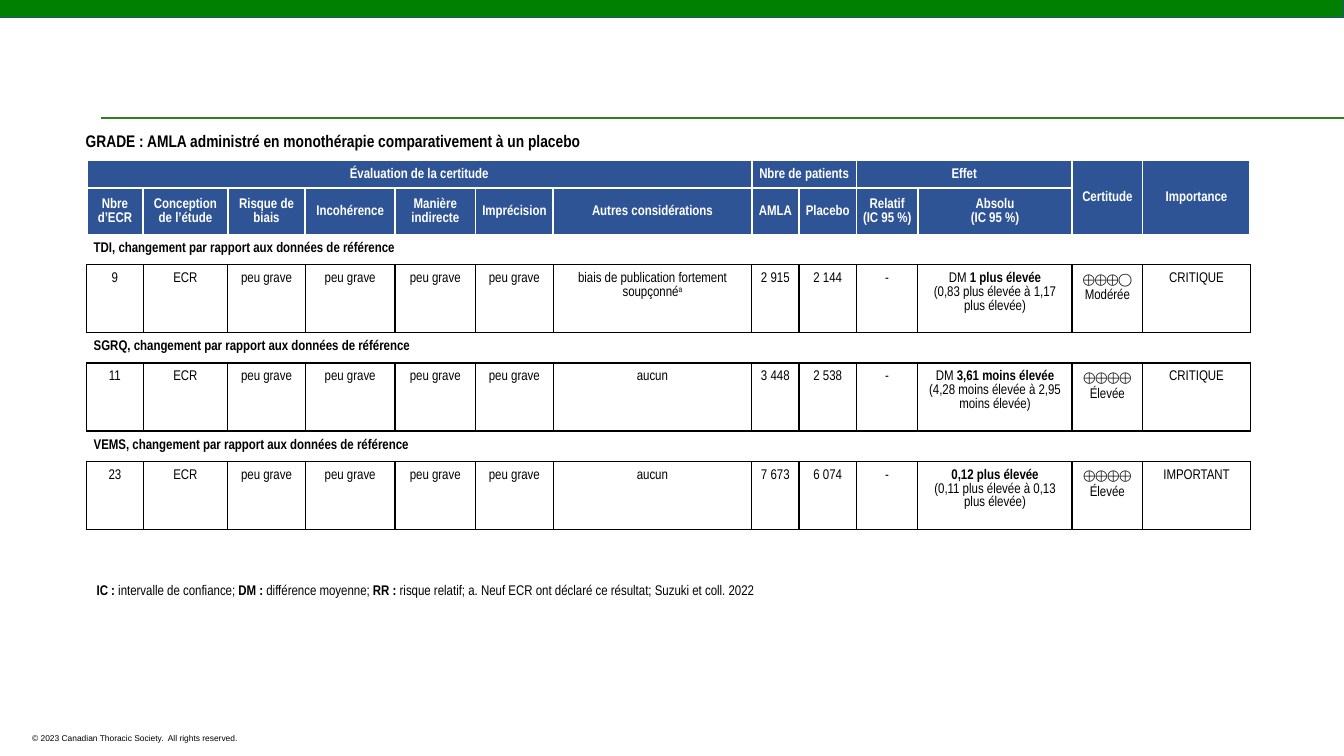
from copy import deepcopy
from dataclasses import dataclass

from lxml import etree
from pptx import Presentation
from pptx import util as u
from pptx.dml.color import RGBColor
from pptx.enum import shapes, text
from pptx.oxml.ns import qn


@dataclass(frozen=True)
class Theme:
    body: str = "Arial Narrow"
    legal: str = "Arial"
    symbol: str = "Cambria"
    ink: str = "000000"
    paper: str = "FFFFFF"
    header: str = "2F5496"
    bar: str = "008000"
    bar_edge: str = "265178"
    rule: str = "2F7E20"
    title_size: int = 12
    body_size: int = 10
    legal_size: int = 6
    grid_line: float = 1
    header_line: float = 1.5


T = Theme()
W, H = u.Inches(13.33), u.Inches(7.5)
SIDES = ("L", "R", "T", "B")

COLUMNS = (0.56, 0.84, 0.77, 0.89, 0.8, 0.77, 1.97, 0.47, 0.57, 0.61, 1.53, 0.7, 1.07)
HEADER_ROWS = (3.6, 5.6)
LABEL_ROW, DATA_ROW = 4, 8.27
GROUPS = (
    ("Évaluation de la certitude", 0, 1, 7),
    ("Nbre de patients", 7, 1, 2),
    ("Effet", 9, 1, 2),
    ("Certitude", 11, 2, 1),
    ("Importance", 12, 2, 1),
)
HEADINGS = (
    "Nbre d’ECR", "Conception de l’étude", "Risque de biais", "Incohérence",
    "Manière indirecte", "Imprécision", "Autres considérations", "AMLA", "Placebo",
    "Relatif\n(IC 95 %)", "Absolu\n(IC 95 %)",
)
OUTCOMES = (
    ("TDI", "9", [("biais de publication fortement soupçonné", ""), ("a", "sup")],
     "2 915", "2 144",
     [("DM ", ""), ("1 plus élevée\n", "bold"), ("(0,83 plus élevée à 1,17 plus élevée)", "")],
     "⨁⨁⨁◯", "Modérée", "CRITIQUE"),
    ("SGRQ", "11", [("aucun", "")], "3 448", "2 538",
     [("DM ", ""), ("3,61 moins élevée\n", "bold"), ("(4,28 moins élevée à 2,95 moins élevée)", "")],
     "⨁⨁⨁⨁", "Élevée", "CRITIQUE"),
    ("VEMS", "23", [("aucun", "")], "7 673", "6 074",
     [("0,12 plus élevée\n", "bold"), ("(0,11 plus élevée à 0,13 plus élevée)", "")],
     "⨁⨁⨁⨁", "Élevée", "IMPORTANT"),
)
NOTE = [
    ("IC :", "bold"), (" intervalle de confiance; ", ""),
    ("DM :", "bold"), (" différence moyenne; ", ""),
    ("RR :", "bold"),
    (" risque relatif; a. Neuf ECR ont déclaré ce résultat; Suzuki et coll. 2022", ""),
]


def rgb(color):
    return RGBColor.from_string(color)


def share(x, y, w, h):
    return [round(v * side / 100) for v, side in ((x, W), (y, H), (w, W), (h, H))]


def write(p, runs, size=T.body_size, color=T.ink, font=T.body):
    for words, style in runs:
        for i, line in enumerate(words.split("\n")):
            if i:
                p.add_line_break()
                br = p._p.findall(qn("a:br"))[-1]
                br.append(deepcopy(r._r.rPr))
            if not line:
                continue
            r = p.add_run()
            r.text = line
            r.font.size = u.Pt(size)
            r.font.name = T.symbol if style == "symbol" else font
            r.font.bold = style == "bold"
            r.font.color.rgb = rgb(color)
            if style == "sup":
                r.font._element.set("baseline", "30000")


def frame(sp, runs, anchor=text.MSO_ANCHOR.TOP, **style):
    tf = sp.text_frame
    tf.word_wrap = True
    tf.auto_size = text.MSO_AUTO_SIZE.SHAPE_TO_FIT_TEXT
    tf.vertical_anchor = anchor
    p = tf.paragraphs[0]
    p.alignment = text.PP_ALIGN.LEFT
    write(p, runs, **style)


def add_text(s, box, runs, **style):
    frame(s.shapes.add_textbox(*share(*box)), runs, **style)


def add_title(s, box, words):
    sp = s.shapes.title
    sp.left, sp.top, sp.width, sp.height = share(*box)
    frame(sp, [(words, "bold")], size=T.title_size)


def add_bar(s, box):
    sp = s.shapes.add_shape(shapes.MSO_SHAPE.RECTANGLE, *share(*box))
    sp.shadow.inherit = False
    sp.fill.solid()
    sp.fill.fore_color.rgb = rgb(T.bar)
    sp.line.color.rgb = rgb(T.bar_edge)
    sp.line.width = u.Pt(0.75)


def add_rule(s, x1, x2, y):
    line = s.shapes.add_connector(
        shapes.MSO_CONNECTOR.STRAIGHT, *share(x1, y, x2, y))
    line.line.color.rgb = rgb(T.rule)
    line.line.width = u.Pt(1)
    etree.SubElement(line._element.spPr, qn("a:effectLst"))


def add_borders(cell, edges):
    tcPr = cell._tc.get_or_add_tcPr()
    for side in SIDES:
        ln = etree.SubElement(tcPr, qn(f"a:ln{side}"))
        if side in edges:
            color, width = edges[side]
            ln.set("w", str(u.Pt(width)))
            fill = etree.SubElement(ln, qn("a:solidFill"))
            etree.SubElement(fill, qn("a:srgbClr")).set("val", color)
        else:
            ln.set("w", "0")
            etree.SubElement(ln, qn("a:noFill"))


def paint(cell, edges, fill=None):
    add_borders(cell, edges)
    if fill:
        cell.fill.solid()
        cell.fill.fore_color.rgb = rgb(fill)
    else:
        cell.fill.background()


def fill_cell(cell, runs, margins, align=text.PP_ALIGN.CENTER,
              anchor=text.MSO_ANCHOR.MIDDLE, color=T.ink):
    (cell.margin_left, cell.margin_top,
     cell.margin_right, cell.margin_bottom) = [u.Inches(m) for m in margins]
    cell.vertical_anchor = anchor
    p = cell.text_frame.paragraphs[0]
    p.alignment = align
    p.line_spacing = 1.07
    p.space_after = u.Pt(8)
    write(p, runs, color=color)


def add_header(tbl):
    edges = dict.fromkeys(SIDES, (T.paper, T.header_line))
    for row in range(len(HEADER_ROWS)):
        for cell in tbl.rows[row].cells:
            paint(cell, edges, T.header)
    titles = [(0, *group) for group in GROUPS]
    titles += [(1, words, col, 1, 1) for col, words in enumerate(HEADINGS)]
    for row, words, col, down, across in titles:
        cell = tbl.cell(row, col)
        if down * across > 1:
            cell.merge(tbl.cell(row + down - 1, col + across - 1))
        fill_cell(cell, [(words, "bold")], (0.05,) * 4, color=T.paper)


def add_outcome(tbl, row, outcome):
    name, trials, other, treated, placebo, effect, marks, level, weight = outcome
    black = (T.ink, T.grid_line)
    first = row == len(HEADER_ROWS)
    edges = {"T": (T.paper, T.header_line) if first else black, "B": black}
    for cell in tbl.rows[row].cells:
        paint(cell, edges, T.paper)
    label = tbl.cell(row, 0)
    label.merge(tbl.cell(row, len(COLUMNS) - 1))
    fill_cell(label, [(f"{name}, changement par rapport aux données de référence", "bold")],
              (0.07, 0.05, 0.07, 0.07), align=text.PP_ALIGN.LEFT)

    values = [[(v, "")] for v in (trials, "ECR", *["peu grave"] * 4)]
    values += [other, [(treated, "")], [(placebo, "")], [("-", "")], effect,
               [(f"{marks}\n", "symbol"), (level, "")], [(weight, "")]]
    for cell, runs in zip(tbl.rows[row + 1].cells, values):
        paint(cell, dict.fromkeys(SIDES, black))
        fill_cell(cell, runs, (0.07,) * 4, anchor=text.MSO_ANCHOR.TOP)


def add_grade_table(s, x, y, w):
    heights = [*HEADER_ROWS, *[LABEL_ROW, DATA_ROW] * len(OUTCOMES)]
    box = share(x, y, w, sum(heights))
    tbl = s.shapes.add_table(len(heights), len(COLUMNS), *box).table
    tbl.first_row = tbl.horz_banding = False
    for col, part in zip(tbl.columns, COLUMNS):
        col.width = round(box[2] * part / sum(COLUMNS))
    for row, height in zip(tbl.rows, heights):
        row.height = round(H * height / 100)
    add_header(tbl)
    for i, outcome in enumerate(OUTCOMES):
        add_outcome(tbl, len(HEADER_ROWS) + 2 * i, outcome)


def main():
    prs = Presentation()
    prs.slide_width, prs.slide_height = W, H
    s = prs.slides.add_slide(prs.slide_layouts[5])
    add_bar(s, (0, 0, 100, 2.27))
    add_rule(s, 7.5, 100, 15.6)
    add_text(s, (1.65, 96.27, 23.78, 2.67),
             [("© 2023 Canadian Thoracic Society.  All rights reserved.", "")],
             size=T.legal_size, font=T.legal)
    add_grade_table(s, 6.45, 21.2, 86.6)
    add_text(s, (6.45, 76.27, 51.24, 3.6), NOTE, anchor=text.MSO_ANCHOR.MIDDLE)
    add_title(s, (5.63, 16.67, 49.89, 4),
              "GRADE : AMLA administré en monothérapie comparativement à un placebo")
    prs.save("out.pptx")


if __name__ == "__main__":
    main()
